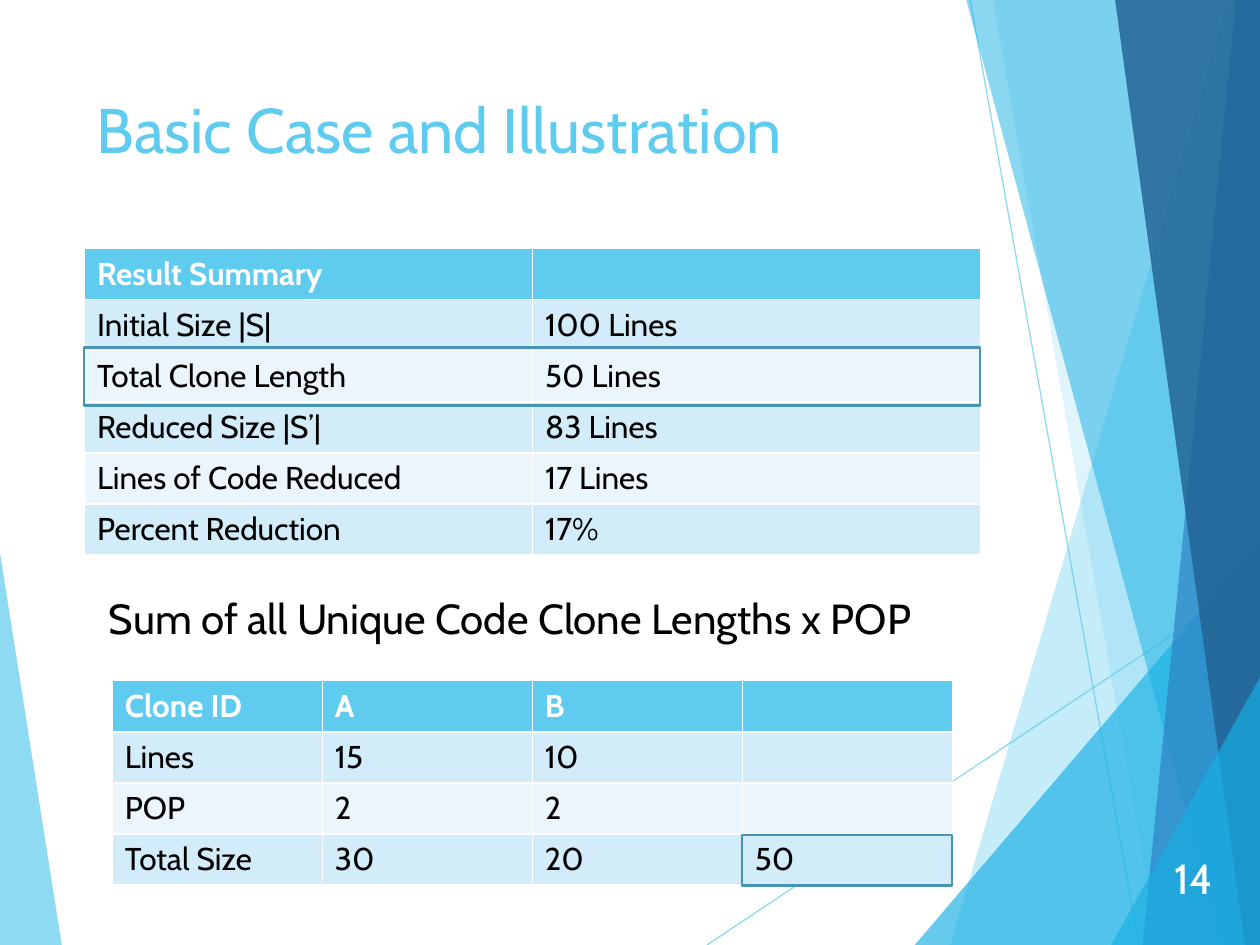
"""Build the slide on basic clone reduction with its two result tables."""
from lxml import etree
from pptx import Presentation
from pptx.dml.color import RGBColor
from pptx.enum import shapes, text
from pptx.oxml import ns
from pptx.util import Pt

SKY = RGBColor(0x5F, 0xCB, 0xEF)
CYAN = RGBColor(0x17, 0xB0, 0xE4)
BLUE = RGBColor(0x2E, 0x83, 0xC3)
NAVY = RGBColor(0x22, 0x62, 0x92)
EDGE = RGBColor(0x46, 0x96, 0xB1)
PALE = RGBColor(0xD2, 0xEC, 0xF9)
MIST = RGBColor(0xEA, 0xF6, 0xFC)
WHITE = RGBColor(0xFF, 0xFF, 0xFF)
BLACK = RGBColor(0, 0, 0)

WIDE, HIGH = 720, 540
ROW = 29.2

FACETS = [
    (SKY, 70, [(0, 316), (35.3, HIGH), (0, HIGH)]),
    (SKY, 36, [(702, 0), (543, HIGH), (WIDE, HIGH), (WIDE, 0)]),
    (SKY, 20, [(567.4, 0), (661.7, HIGH), (WIDE, HIGH), (WIDE, 0)]),
    (CYAN, 66, [(522.7, HIGH), (WIDE, 309), (WIDE, HIGH)]),
    (CYAN, 50, [(552.2, 0), (698.4, HIGH), (WIDE, HIGH), (WIDE, 0)]),
    (BLUE, 70, [(706.3, 0), (653, HIGH), (WIDE, HIGH), (WIDE, 0)]),
    (NAVY, 82, [(637.2, 0), (711.4, HIGH), (WIDE, HIGH), (WIDE, 0)]),
    (CYAN, 66, [(635, HIGH), (WIDE, 387), (WIDE, HIGH)]),
]
RAYS = [(404, HIGH, WIDE, 329.5), (554.4, 0, 650.9, HIGH)]

SUMMARY = [
    ("Result Summary", ""),
    ("Initial Size |S|", "100 Lines"),
    ("Total Clone Length", "50 Lines"),
    ("Reduced Size |S’|", "83 Lines"),
    ("Lines of Code Reduced", "17 Lines"),
    ("Percent Reduction", "17%"),
]
CLONES = [
    ("Clone ID", "A", "B", ""),
    ("Lines", "15", "10", ""),
    ("POP", "2", "2", ""),
    ("Total Size", "30", "20", "50"),
]


class Painter:
    """Hold the style and the current slide."""

    font = "Cabin"

    def __init__(self, slide):
        self.slide = slide
        self.shapes = slide.shapes

    def style(self, para, size, color, bold=False):
        for run in para.runs:
            run.font.name = self.font
            run.font.size = Pt(size)
            run.font.bold = bold
            run.font.color.rgb = color

    def fade(self, fill, pct):
        tint = fill._xPr.find(".//" + ns.qn("a:srgbClr"))
        etree.SubElement(tint, ns.qn("a:alpha")).set("val", str(pct * 1000))

    def facet(self, color, pct, points):
        spots = [(Pt(x), Pt(y)) for x, y in points]
        pen = self.shapes.build_freeform(*spots[0])
        pen.add_line_segments(spots[1:], close=True)
        shape = pen.convert_to_shape()
        shape.shadow.inherit = False
        shape.fill.solid()
        shape.fill.fore_color.rgb = color
        self.fade(shape.fill, pct)
        shape.line.fill.background()

    def ray(self, *ends):
        line = self.shapes.add_connector(
            shapes.MSO_CONNECTOR.STRAIGHT, *map(Pt, ends))
        line.line.width = Pt(0.75)
        line.line.color.rgb = SKY
        self.fade(line.line.fill, 70)
        etree.SubElement(line._element.spPr, ns.qn("a:effectLst"))

    def title(self, words, *box):
        shape = self.shapes.title
        shape.left, shape.top, shape.width, shape.height = map(Pt, box)
        frame = shape.text_frame
        frame.text = words
        frame.vertical_anchor = text.MSO_ANCHOR.TOP
        frame.paragraphs[0].alignment = text.PP_ALIGN.LEFT
        self.style(frame.paragraphs[0], 36, SKY)

    def label(self, words, color, align, anchor, *box):
        frame = self.shapes.add_textbox(*map(Pt, box)).text_frame
        frame.word_wrap = True
        frame.text = words
        frame.vertical_anchor = anchor
        frame.paragraphs[0].alignment = align
        self.style(frame.paragraphs[0], 24, color)

    def table(self, rows, left, top, width):
        count = len(rows[0])
        grid = self.shapes.add_table(
            len(rows), count, Pt(left), Pt(top),
            Pt(width), Pt(ROW * len(rows))).table
        for col in grid.columns:
            col.width = Pt(width / count)
        for r, row in enumerate(rows):
            grid.rows[r].height = Pt(ROW)
            head = r == 0
            for c, words in enumerate(row):
                cell = grid.cell(r, c)
                cell.fill.solid()
                cell.fill.fore_color.rgb = (
                    SKY if head else PALE if r % 2 else MIST)
                cell.text_frame.text = words
                self.style(cell.text_frame.paragraphs[0], 18,
                           WHITE if head else BLACK, head)

    def frame(self, *box):
        shape = self.shapes.add_shape(
            shapes.MSO_SHAPE.RECTANGLE, *map(Pt, box))
        shape.shadow.inherit = False
        shape.fill.background()
        shape.line.color.rgb = EDGE
        shape.line.width = Pt(1.5)


def main():
    deck = Presentation()
    deck.slide_width, deck.slide_height = Pt(WIDE), Pt(HIGH)
    art = Painter(deck.slides.add_slide(deck.slide_layouts[5]))
    left, top = text.PP_ALIGN.LEFT, text.MSO_ANCHOR.TOP
    art.facet(*FACETS[0])
    for ends in RAYS:
        art.ray(*ends)
    for facet in FACETS[1:]:
        art.facet(*facet)
    art.title("Basic Case and Illustration", 48, 48, 500, 104)
    art.table(SUMMARY, 48.3, 142, 512)
    art.label("14", WHITE, text.PP_ALIGN.RIGHT, text.MSO_ANCHOR.MIDDLE,
              631, 476, 69, 51)
    art.frame(48, 198.7, 512, 33)
    art.label("Sum of all Unique Code Clone Lengths x POP", BLACK, left, top,
              55.2, 335, 498, 36)
    art.table(CLONES, 64.2, 389, 480)
    art.frame(424, 477.2, 120, 28.8)
    deck.save("out.pptx")


if __name__ == "__main__":
    main()
